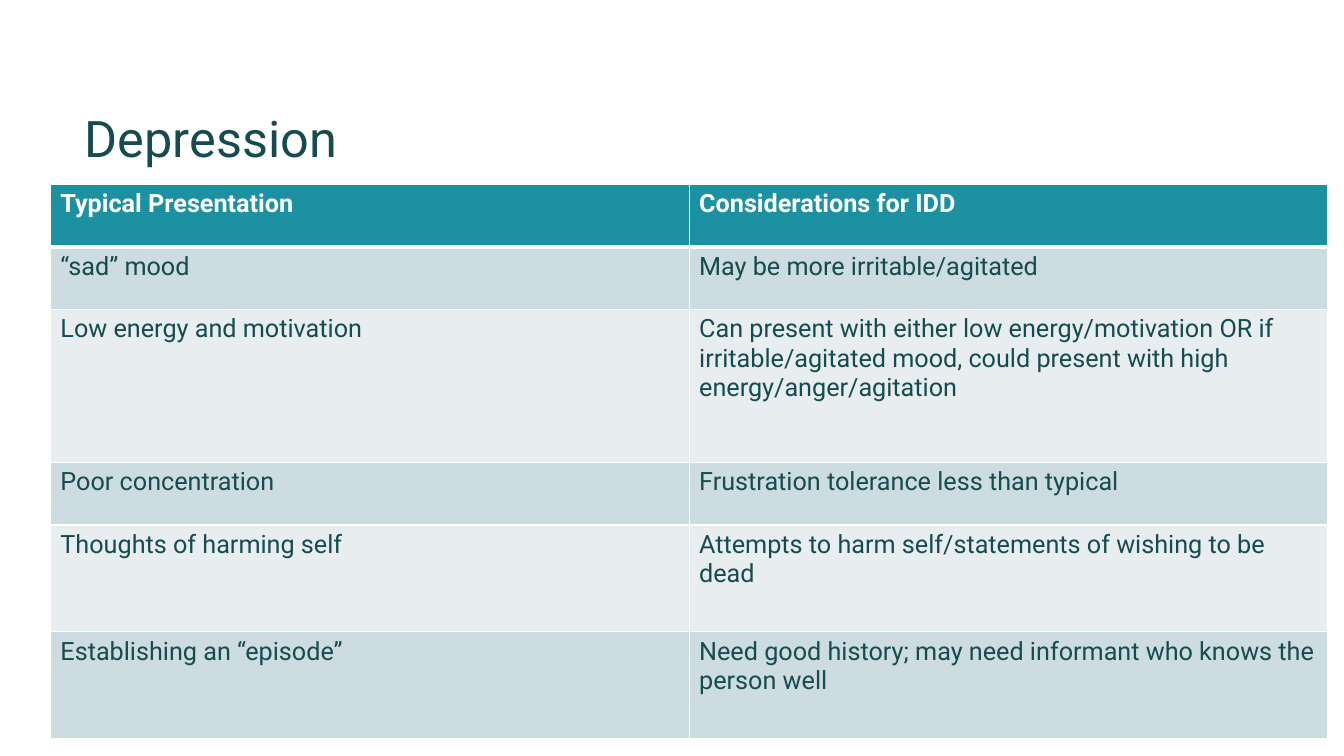
from lxml.etree import SubElement
from pptx import Presentation
from pptx.dml.color import RGBColor
from pptx.enum.text import MSO_ANCHOR as Anchor, MSO_AUTO_SIZE as AutoSize, PP_ALIGN as Align
from pptx.oxml.ns import qn
from pptx.util import Inches, Pt

WHITE = RGBColor(0xFF, 0xFF, 0xFF)
DARK_TEAL = RGBColor(0x16, 0x4B, 0x4F)
TEAL = RGBColor(0x1B, 0x91, 0xA1)
BANDS = [RGBColor(0xE8, 0xEE, 0xF0), RGBColor(0xCD, 0xDC, 0xE0)]

COMPARISON = [
    ("Typical Presentation", "Considerations for IDD"),
    ("“sad” mood", "May be more irritable/agitated"),
    ("Low energy and motivation",
     "Can present with either low energy/motivation OR if irritable/agitated mood, "
     "could present with high energy/anger/agitation"),
    ("Poor concentration", "Frustration tolerance less than typical"),
    ("Thoughts of harming self", "Attempts to harm self/statements of wishing to be dead"),
    ("Establishing an “episode”",
     "Need good history; may need informant who knows the person well"),
]
ROW_HEIGHTS = [0.62, 0.62, 1.52, 0.62, 1.06, 1.06]


def write(frame, text, size=18, color=DARK_TEAL, bold=False, spacing=1.0):
    paragraph = frame.paragraphs[0]
    paragraph.alignment = Align.LEFT
    paragraph.line_spacing = spacing
    run = paragraph.add_run()
    run.text = text
    run.font.name = "Roboto"
    run.font.size = Pt(size)
    run.font.bold = bold
    run.font.color.rgb = color


def add_borders(cell, widths):
    """Draw white cell borders; widths maps each side (L, R, T, B) to points."""
    properties = cell._tc.get_or_add_tcPr()
    for side, points in widths.items():
        line = SubElement(properties, qn(f"a:ln{side}"), w=str(Pt(points)))
        fill = SubElement(line, qn("a:solidFill"))
        SubElement(fill, qn("a:srgbClr"), val=str(WHITE))


deck = Presentation()
deck.slide_width, deck.slide_height = Inches(13.33), Inches(7.5)
slide = deck.slides.add_slide(deck.slide_layouts[5])

title = slide.shapes.title
title.left, title.top = Inches(0.74), Inches(0.67)
title.width, title.height = Inches(11.69), Inches(1.05)
title.text_frame.vertical_anchor = Anchor.BOTTOM
title.text_frame.auto_size = AutoSize.NONE
write(title.text_frame, "Depression", size=36, spacing=0.9)

comparison = slide.shapes.add_table(
    len(COMPARISON), 2, Inches(0.5), Inches(1.83), Inches(12.67), Inches(sum(ROW_HEIGHTS))
).table

for row, (entries, height) in enumerate(zip(COMPARISON, ROW_HEIGHTS)):
    comparison.rows[row].height = Inches(height)
    is_header = row == 0
    for column, entry in enumerate(entries):
        cell = comparison.cell(row, column)
        add_borders(cell, {"L": 1, "R": 1, "T": 3 if row == 1 else 1, "B": 3 if is_header else 1})
        cell.fill.solid()
        cell.fill.fore_color.rgb = TEAL if is_header else BANDS[row % 2]
        write(cell.text_frame, entry, color=WHITE if is_header else DARK_TEAL, bold=is_header)

deck.save("out.pptx")
